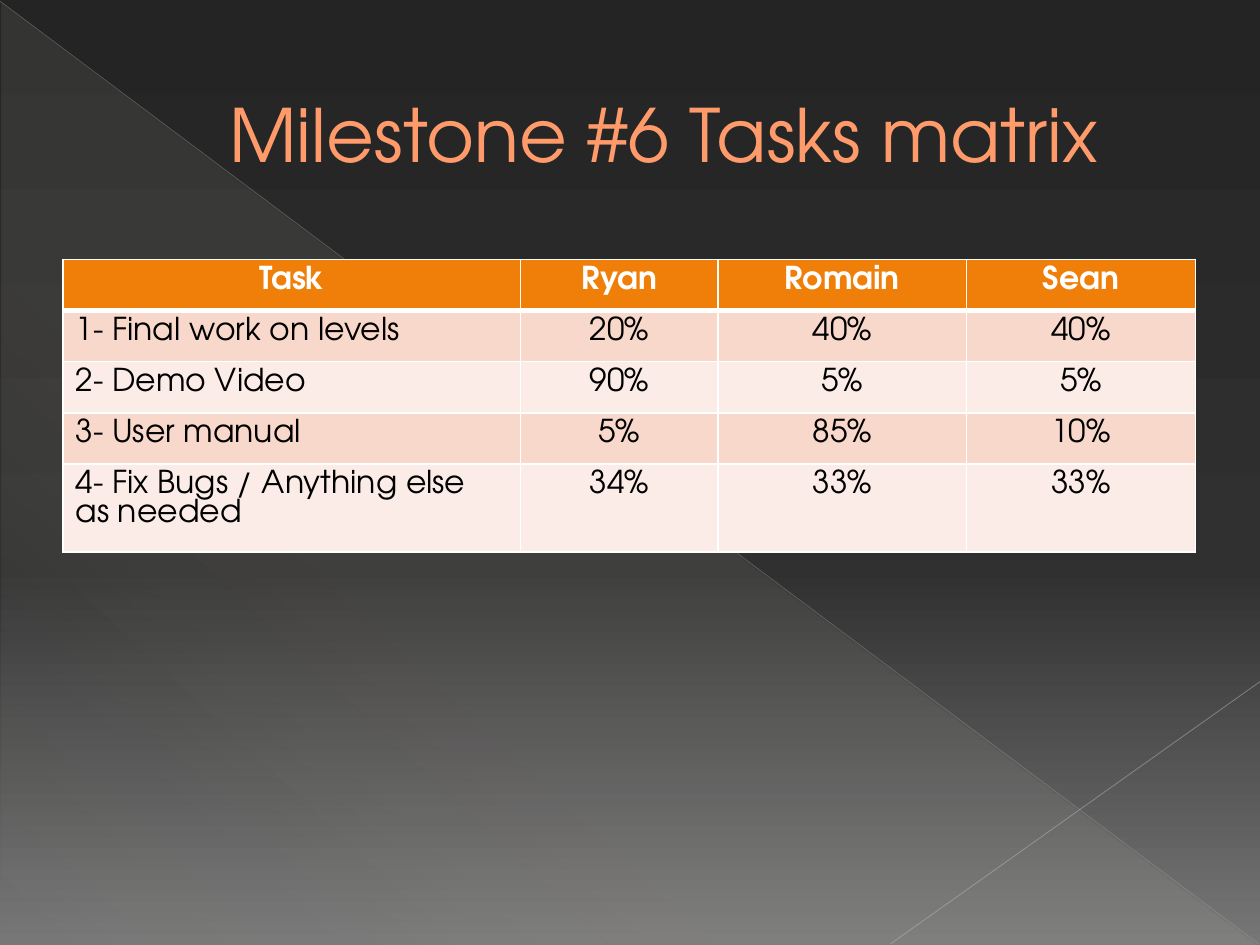
from lxml.etree import SubElement
from pptx import Presentation
from pptx.dml.color import RGBColor
from pptx.enum.shapes import MSO_CONNECTOR, MSO_SHAPE
from pptx.enum.text import MSO_ANCHOR, PP_ALIGN
from pptx.oxml import parse_xml
from pptx.oxml.ns import nsdecls, qn
from pptx.util import Inches, Pt

FONT = "TeX Gyre Adventor"
COLORS = {
    "title": "FF9B6A", "title_edge": "A65806", "header": "F07F09",
    "band_dark": "F9D8CC", "band_light": "FCECE7",
    "white": "FFFFFF", "black": "000000",
    "bg_top": "242424", "bg_mid": "303030", "bg_bottom": "767676",
    "triangle": "E3DED1", "diagonal": "B6B6B6", "corner": "BFBFBF",
}


def set_gradient(fill, element, angle, stops):
    """Fill with (percent, color, opacity percent) stops, angle clockwise."""
    fill.gradient()
    fill.gradient_angle = 360 - angle
    gs_list = element.find(".//" + qn("a:gsLst"))
    for gs in list(gs_list):
        gs_list.remove(gs)
    for pos, color, opacity in stops:
        gs = SubElement(gs_list, qn("a:gs"), pos=str(pos * 1000))
        clr = SubElement(gs, qn("a:srgbClr"), val=COLORS[color])
        SubElement(clr, qn("a:alpha"), val=str(opacity * 1000))


def line_xml(tag, color, width):
    return parse_xml(
        f'<a:{tag} {nsdecls("a")} w="{Pt(width)}"><a:solidFill>'
        f'<a:srgbClr val="{COLORS[color]}"/></a:solidFill></a:{tag}>')


prs = Presentation()
prs.slide_width, prs.slide_height = Inches(10), Inches(7.5)
s = prs.slides.add_slide(prs.slide_layouts[6])

# Backdrop
set_gradient(s.background.fill, s._element, 90,
             [(0, "bg_top", 100), (60, "bg_mid", 100), (100, "bg_bottom", 100)])
sp = s.shapes.add_shape(MSO_SHAPE.RIGHT_TRIANGLE, Inches(0.01), Inches(0.02),
                        Inches(9.98), Inches(7.48))
sp.shadow.inherit = False
sp.line.fill.background()
set_gradient(sp.fill, sp._element, 133,
             [(0, "triangle", 10), (70, "triangle", 8), (100, "triangle", 1)])

for x1, y1, x2, y2, color, width, opacity in [
    (0, 0.01, 9.99, 7.49, "diagonal", 0.39, 35),
    (10, 5.41, 7.07, 7.49, "corner", 0.47, 45),
]:
    line = s.shapes.add_connector(MSO_CONNECTOR.STRAIGHT, Inches(x1), Inches(y1),
                                  Inches(x2), Inches(y2))
    line.line.color.rgb = RGBColor.from_string(COLORS[color])
    line.line.width = Pt(width)
    SubElement(line._element.spPr.find(".//" + qn("a:srgbClr")), qn("a:alpha"),
               val=str(opacity * 1000))
    SubElement(line._element.spPr, qn("a:effectLst"))

# Title
tf = s.shapes.add_textbox(Inches(0.5), Inches(0.29), Inches(9), Inches(1.53)).text_frame
tf.word_wrap = True
tf.vertical_anchor = MSO_ANCHOR.MIDDLE
tf.margin_left = Inches(0.63)
p = tf.paragraphs[0]
p.alignment = PP_ALIGN.CENTER
r = p.add_run()
r.text = "Milestone #6 Tasks matrix"
r.font.name, r.font.size = FONT, Pt(42)
r.font.color.rgb = RGBColor.from_string(COLORS["title"])
r.font._element.insert(0, line_xml("ln", "title_edge", 0.5))

# Task matrix
rows = [
    ("Task", "Ryan", "Romain", "Sean"),
    ("1- Final work on levels", "20%", "40%", "40%"),
    ("2- Demo Video", "90%", "5%", "5%"),
    ("3- User manual", "5%", "85%", "10%"),
    ("4- Fix Bugs / Anything else as needed", "34%", "33%", "33%"),
]
row_height = Pt(29.2)
table = s.shapes.add_table(len(rows), len(rows[0]), Inches(0.5), Inches(2.06),
                           Inches(9), row_height * len(rows)).table
for column, width in zip(table.columns, (3.63, 1.57, 1.97, 1.82)):
    column.width = Inches(width)

for i, row in enumerate(rows):
    table.rows[i].height = row_height
    header = i == 0
    band = "header" if header else ("band_dark" if i % 2 else "band_light")
    borders = {"lnL": 1, "lnR": 1, "lnT": 3 if i == 1 else 1, "lnB": 3 if header else 1}
    for j, text in enumerate(row):
        cell = table.cell(i, j)
        cell.fill.solid()
        cell.fill.fore_color.rgb = RGBColor.from_string(COLORS[band])
        for k, (tag, width) in enumerate(borders.items()):
            cell._tc.tcPr.insert(k, line_xml(tag, "white", width))
        p = cell.text_frame.paragraphs[0]
        p.alignment = PP_ALIGN.CENTER if header or j else PP_ALIGN.LEFT
        r = p.add_run()
        r.text = text
        r.font.name, r.font.size, r.font.bold = FONT, Pt(18), header
        r.font.color.rgb = RGBColor.from_string(COLORS["white" if header else "black"])

prs.save("out.pptx")
